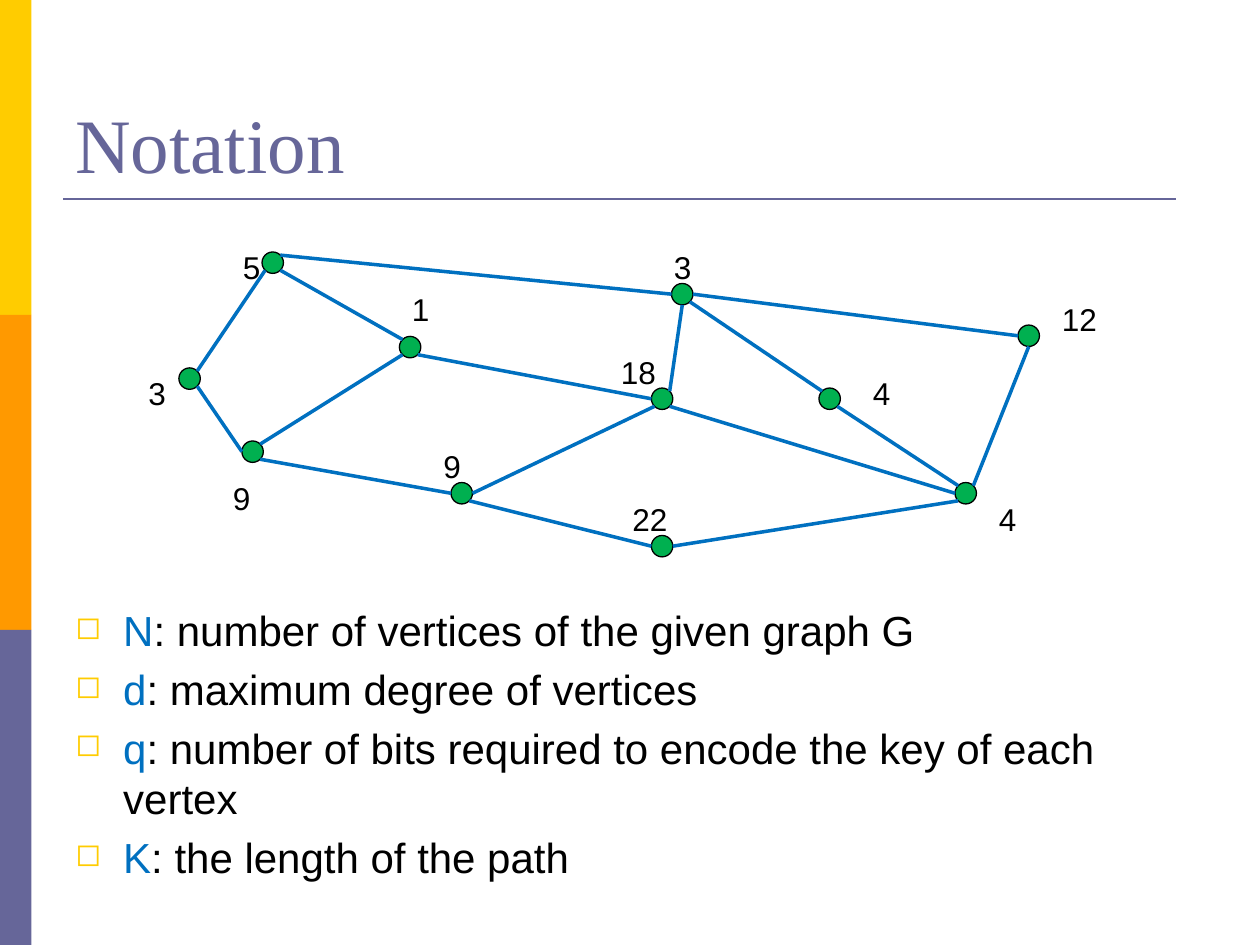
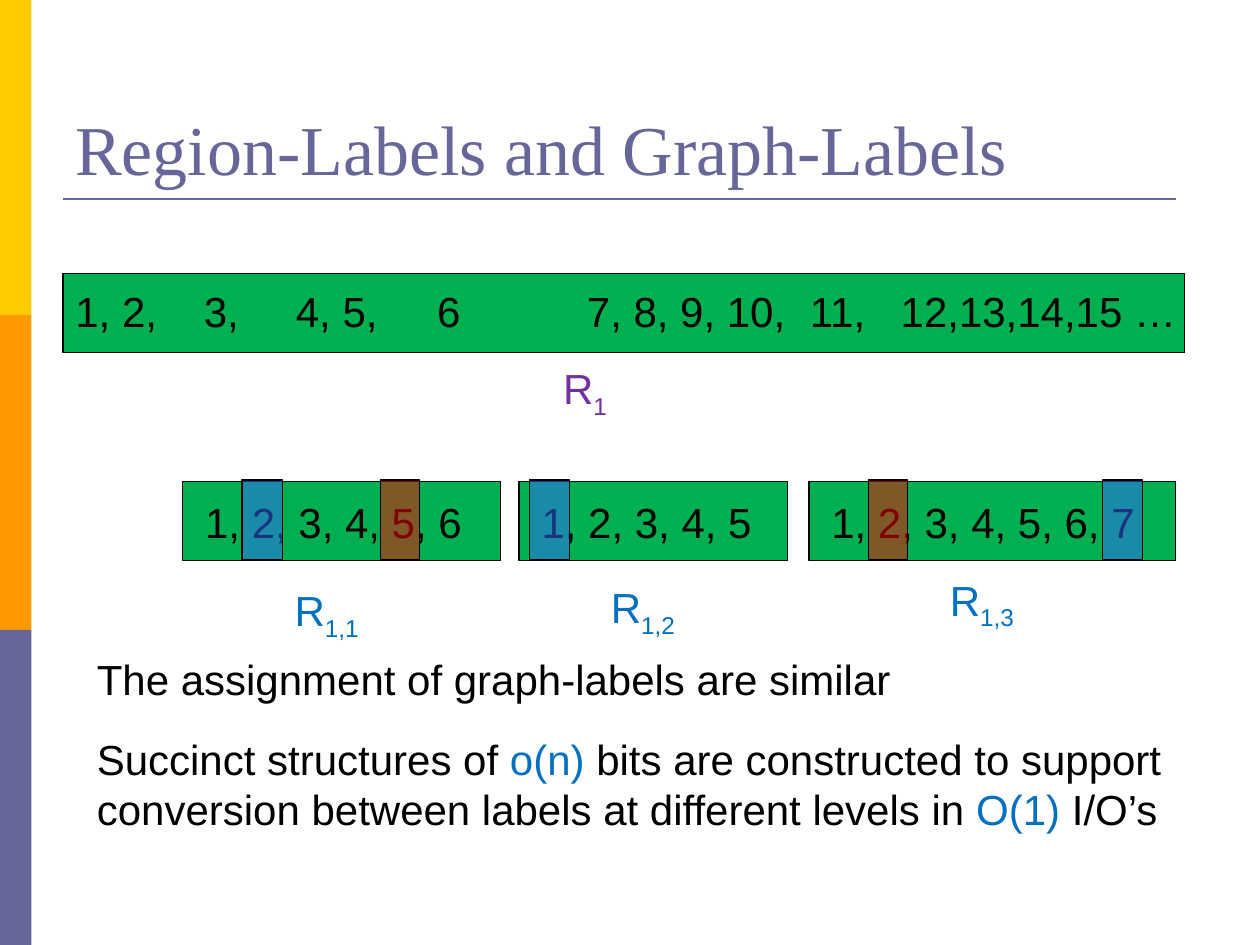
"""Builds two slides on graph notation and region labels."""
import math

import pptx
import pptx.dml.color
import pptx.enum.shapes
import pptx.enum.text
import pptx.oxml
import pptx.oxml.ns
import pptx.util

Inches = pptx.util.Inches
Pt = pptx.util.Pt
SHAPES = pptx.enum.shapes.MSO_SHAPE

BLACK, GREEN, BLUE, PURPLE = "000000", "00B050", "0070C0", "7030A0"
YELLOW, ORANGE, SLATE = "FFCC00", "FF9900", "666699"
MARK_BLUE, MARK_RED = "3366FF", "FF0000"
BODY_FONT, TITLE_FONT = "Arial", "Times New Roman"
DIAMETER = 0.17
COMPASS = ["E", "SE", "S", "SW", "W", "NW", "N", "NE"]

VERTICES = {
    "west": (1.42, 2.92), "southwest": (1.92, 3.5), "inner": (3.17, 2.67),
    "lower": (3.58, 3.83), "northwest": (2.08, 2), "hub": (5.17, 3.08),
    "middle": (6.5, 3.08), "north": (5.33, 2.25), "east": (8.08, 2.58),
    "southeast": (7.58, 3.83), "south": (5.17, 4.25),
}
EDGES = [
    ("northwest", "SE", "inner", "NW"), ("northwest", "SW", "west", "NE"),
    ("southwest", "SE", "lower", "W"), ("inner", "SE", "hub", "W"),
    ("hub", "SW", "lower", "E"), ("inner", "SW", "southwest", "NE"),
    ("north", "S", "hub", "NE"), ("north", "E", "east", "W"),
    ("north", "SE", "middle", "NW"), ("hub", "SE", "southeast", "W"),
    ("middle", "SE", "southeast", "NW"), ("northwest", "NE", "north", "W"),
    ("west", "SE", "southwest", "W"), ("lower", "SE", "south", "W"),
    ("south", "E", "southeast", "SW"), ("east", "S", "southeast", "NE"),
]
KEYS = [
    ("3", 1.08, 2.92), ("5", 1.83, 1.92), ("3", 5.25, 1.92), ("1", 3.17, 2.25),
    ("9", 3.42, 3.5), ("9", 1.75, 3.75), ("4", 6.83, 2.92), ("12", 8.33, 2.33),
    ("22", 4.92, 3.92), ("18", 4.83, 2.75), ("4", 7.83, 3.92),
]
DEFINITIONS = [
    ("N", ": number of vertices of the given graph G"),
    ("d", ": maximum degree of vertices"),
    ("q", ": number of bits required to encode the key of each vertex"),
    ("K", ": the length of the path"),
]
REGIONS = [
    (1.45, 2.52, "1, 2, 3, 4, 5, 6"),
    (4.12, 2.13, "1, 2, 3, 4, 5"),
    (6.42, 2.91, "1, 2, 3, 4, 5, 6, 7"),
]
REGION_NAMES = [
    (4.37, 2.83, "1", PURPLE), (2.24, 4.59, "1,1", BLUE),
    (4.75, 4.57, "1,2", BLUE), (7.44, 4.51, "1,3", BLUE),
]
MARKS = [
    (1.92, 0.32, MARK_BLUE), (4.2, 0.32, MARK_BLUE), (8.75, 0.32, MARK_BLUE),
    (3.02, 0.31, MARK_RED), (6.89, 0.31, MARK_RED),
]
LABEL_GROUPS = ["1, 2,", "3,", "4, 5,", "6", "7, 8, 9, 10,", "11,", "12,13,14,15 …"]
GROUP_STOPS = [1.02, 1.75, 2.87, 4.06, 5.83, 6.55]


def color(value):
    """Turns a hex string into a colour."""
    return pptx.dml.color.RGBColor.from_string(value)


def add_xml(parent, tag, **attributes):
    """Appends a drawing element and returns it."""
    child = pptx.oxml.parse_xml(f"<a:{tag} {pptx.oxml.ns.nsdecls('a')}/>")
    for name, value in attributes.items():
        child.set(name, str(value))
    parent.append(child)
    return child


class Deck:
    """Holds the style, the presentation and the current slide."""

    def __init__(self):
        """Starts a presentation of 10 by 7.5 inches."""
        self.presentation = pptx.Presentation()
        self.presentation.slide_width = Inches(10)
        self.presentation.slide_height = Inches(7.5)
        self.slide = None

    def start_slide(self, title, size):
        """Adds a slide with its side bands, rule and title."""
        self.slide = self.presentation.slides.add_slide(self.presentation.slide_layouts[6])
        for index, fill in enumerate([YELLOW, ORANGE, SLATE]):
            self.shape(0, 2.5 * index, 0.25, 2.5, fill, outline=None)
        self.line((0.5, 1.58), (9.33, 1.58), SLATE, 1.5)
        frame = self.text(0.5, 0.3, 9, 1.25, [(title, SLATE)], size, TITLE_FONT)
        frame.vertical_anchor = pptx.enum.text.MSO_ANCHOR.BOTTOM

    def shape(self, left, top, width, height, fill, kind=SHAPES.RECTANGLE,
              outline=BLACK, alpha=None):
        """Draws a filled shape, optionally outlined or see-through."""
        shape = self.slide.shapes.add_shape(
            kind, Inches(left), Inches(top), Inches(width), Inches(height))
        shape.shadow.inherit = False
        shape.fill.solid()
        shape.fill.fore_color.rgb = color(fill)
        if alpha:
            fill_color = shape._element.spPr.find(".//" + pptx.oxml.ns.qn("a:srgbClr"))
            add_xml(fill_color, "alpha", val=alpha * 1000)
        if outline:
            shape.line.color.rgb = color(outline)
            shape.line.width = Pt(0.75)
        else:
            shape.line.fill.background()

    def line(self, start, end, stroke, width):
        """Draws a straight line between two points."""
        connector = self.slide.shapes.add_connector(
            pptx.enum.shapes.MSO_CONNECTOR.STRAIGHT,
            *[Inches(length) for length in (*start, *end)])
        connector.line.color.rgb = color(stroke)
        connector.line.width = Pt(width)
        add_xml(connector._element.spPr, "effectLst")

    def runs(self, paragraph, runs, size, font=BODY_FONT):
        """Adds coloured runs to a paragraph; a third item lowers the baseline."""
        for text, fill, *baseline in runs:
            run = paragraph.add_run()
            run.text = text
            run.font.name = font
            run.font.size = Pt(size)
            run.font.color.rgb = color(fill)
            if baseline:
                run._r.get_or_add_rPr().set("baseline", str(baseline[0] * 1000))

    def text(self, left, top, width, height, runs, size=24, font=BODY_FONT, wrap=True):
        """Adds a text box of one paragraph and returns its frame."""
        box = self.slide.shapes.add_textbox(
            Inches(left), Inches(top), Inches(width), Inches(height))
        frame = box.text_frame
        frame.word_wrap = wrap
        self.runs(frame.paragraphs[0], runs, size, font)
        return frame

    def bullets(self, left, top, width, height, items):
        """Adds a list with hollow square bullets."""
        frame = self.text(left, top, width, height, [])
        for index, runs in enumerate(items):
            paragraph = frame.add_paragraph() if index else frame.paragraphs[0]
            paragraph.space_before = Pt(4.8)
            properties = paragraph._p.get_or_add_pPr()
            properties.set("marL", str(Inches(0.38)))
            properties.set("indent", str(-Inches(0.38)))
            add_xml(add_xml(properties, "buClr"), "srgbClr", val=YELLOW)
            add_xml(properties, "buSzPct", val=75000)
            add_xml(properties, "buChar", char="◻")
            self.runs(paragraph, runs, 24)

    def tab_stops(self, paragraph, stops):
        """Sets left tab stops on a paragraph."""
        tab_list = add_xml(paragraph._p.get_or_add_pPr(), "tabLst")
        for stop in stops:
            add_xml(tab_list, "tab", pos=Inches(stop), algn="l")


def rim_point(vertex, direction):
    """Finds the point on a vertex's rim in a compass direction."""
    radius = DIAMETER / 2
    angle = COMPASS.index(direction) * math.pi / 4
    left, top = VERTICES[vertex]
    return (left + radius * (1 + math.cos(angle)), top + radius * (1 + math.sin(angle)))


def build_notation(deck):
    """Builds the slide with the weighted graph."""
    deck.start_slide("Notation", 44)
    deck.bullets(0.5, 4.75, 9, 2.33,
                 [[(symbol, BLUE), (meaning, BLACK)] for symbol, meaning in DEFINITIONS])
    for left, top in VERTICES.values():
        deck.shape(left, top, DIAMETER, DIAMETER, GREEN, SHAPES.OVAL)
    for start, start_side, end, end_side in EDGES:
        deck.line(rim_point(start, start_side), rim_point(end, end_side), BLUE, 2)
    for key, left, top in KEYS:
        deck.text(left, top, 0.2 + 0.14 * len(key), 0.4, [(key, BLACK)], 18, wrap=False)


def build_labels(deck):
    """Builds the slide with the label regions."""
    deck.start_slide("Region-Labels and Graph-Labels", 40)
    for left, width, labels in REGIONS:
        deck.shape(left, 3.82, width, 0.63, GREEN)
        deck.text(left + 0.08, 3.89, width - 0.15, 0.5, [(labels, BLACK)])
    for left, width, fill in MARKS:
        deck.shape(left, 3.81, width, 0.63, fill, alpha=50)
    for left, top, index, fill in REGION_NAMES:
        deck.text(left, top, 0.79, 0.5, [("R", fill), (index, fill, -25)])
    deck.shape(0.5, 2.17, 8.9, 0.63, GREEN)
    frame = deck.text(0.5, 2.22, 8.98, 0.51, [("\t".join(LABEL_GROUPS), BLACK)])
    deck.tab_stops(frame.paragraphs[0], GROUP_STOPS)
    deck.text(0.67, 5.14, 7.9, 0.5, [("The assignment of graph-labels are similar", BLACK)])
    deck.text(0.67, 5.77, 8.9, 0.91, [
        ("Succinct structures of ", BLACK), ("o(n)", BLUE),
        (" bits are constructed to support conversion between labels"
         " at different levels in ", BLACK),
        ("O(1) ", BLUE), ("I/O’s", BLACK)])


def main():
    """Builds and saves the presentation."""
    deck = Deck()
    build_notation(deck)
    build_labels(deck)
    deck.presentation.save("out.pptx")


if __name__ == "__main__":
    main()
